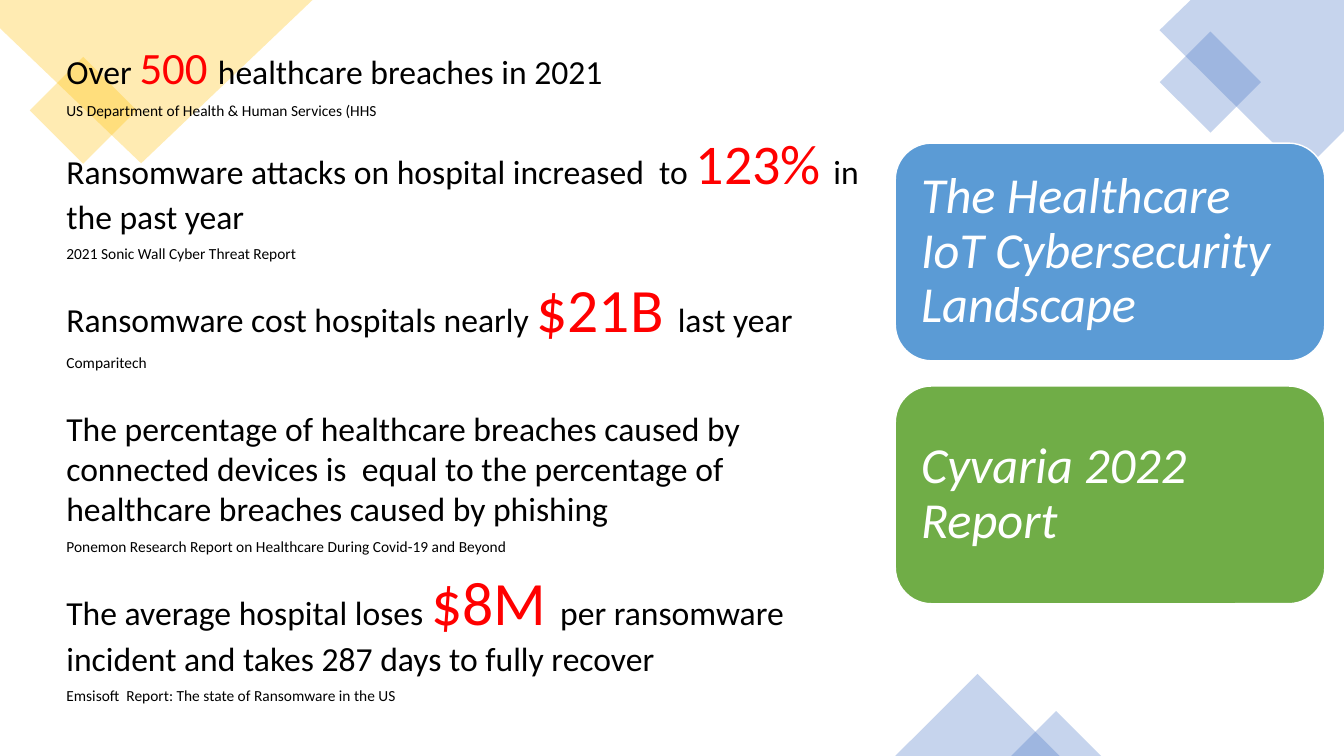
from lxml.etree import SubElement
from pptx import Presentation
from pptx.dml.color import RGBColor
from pptx.enum.shapes import MSO_SHAPE as Preset
from pptx.enum.text import MSO_ANCHOR as Anchor, MSO_AUTO_SIZE as AutoSize, PP_ALIGN as Align
from pptx.oxml.ns import qn
from pptx.util import Inches, Pt

FONT = "Calibri"
BLACK = RGBColor(0x00, 0x00, 0x00)
WHITE = RGBColor(0xFF, 0xFF, 0xFF)
RED = RGBColor(0xFF, 0x00, 0x00)
GOLD = RGBColor(0xFF, 0xC0, 0x00)
BLUE = RGBColor(0x44, 0x72, 0xC4)
SKY = RGBColor(0x5B, 0x9B, 0xD5)
GREEN = RGBColor(0x70, 0xAD, 0x47)

BODY, SOURCE = 24, 11
BLANK_LINE = 19.4

FACTS = [
    ([("Over ", BODY), ("500 ", 32), ("healthcare breaches in 2021", BODY)],
     "US Department of Health & Human Services (HHS", 0),
    ([("Ransomware attacks on hospital increased  to ", BODY), ("123% ", 40),
      ("in the past year", BODY)],
     "2021 Sonic Wall Cyber Threat Report", 0),
    ([("Ransomware cost hospitals nearly ", BODY), ("$21B ", 44), ("last year", BODY)],
     "Comparitech", 0),
    ([("The percentage of healthcare breaches caused by connected devices is  equal to "
       "the percentage of healthcare breaches caused by phishing", BODY)],
     "Ponemon Research Report on Healthcare During Covid-19 and Beyond", BLANK_LINE),
    ([("The average hospital loses ", BODY), ("$8M ", 44),
      ("per ransomware incident and takes 287 days to fully recover", BODY)],
     "Emsisoft  Report: The state of Ransomware in the US", 0),
]

CARDS = [("The Healthcare IoT Cybersecurity Landscape", SKY), ("Cyvaria 2022 Report", GREEN)]

SQUARES = [(0.45, 0.72, 0.75, GOLD), (11.65, 0.46, 0.71, BLUE)]
TRIANGLES = [(8.88, 1.63), (10.03, 0.89)]
CORNERS = [
    ([(0, 0), (3.1, 0), (1.4, 1.62), (0, 0.28)], GOLD),
    ([(11.81, 0), (13.33, 0), (13.33, 1.3), (12.92, 1.71), (11.5, 0.3)], BLUE),
]


def tint(shape, color):
    """Give a shape a 30 % opaque fill with no outline or shadow."""
    shape.shadow.inherit = False
    shape.fill.solid()
    shape.fill.fore_color.rgb = color
    shape.line.fill.background()
    color_element = shape.fill._xPr.find(qn("a:solidFill"))[0]
    SubElement(color_element, qn("a:alpha"), val="30000")


def add_decoration(slide, bottom):
    """Place the translucent squares, corner pieces and bottom triangles."""
    shapes = slide.shapes
    for left, top, side, color in SQUARES:
        square = shapes.add_shape(Preset.RECTANGLE, Inches(left), Inches(top),
                                  Inches(side), Inches(side))
        square.rotation = 45
        tint(square, color)
    for points, color in CORNERS:
        corner = [(Inches(x), Inches(y)) for x, y in points]
        builder = shapes.build_freeform(*corner[0])
        builder.add_line_segments(corner[1:], close=True)
        tint(builder.convert_to_shape(), color)
    for left, width in TRIANGLES:
        height = width / 2
        triangle = shapes.add_shape(Preset.ISOSCELES_TRIANGLE, Inches(left),
                                    Inches(bottom - height), Inches(width), Inches(height))
        tint(triangle, BLUE)


def add_facts(slide, left, top, width, height):
    """Fill a text box with facts, each followed by its source line."""
    box = slide.shapes.add_textbox(Inches(left), Inches(top), Inches(width), Inches(height))
    frame = box.text_frame
    frame.word_wrap = True
    frame.auto_size = AutoSize.SHAPE_TO_FIT_TEXT
    lines = [line for runs, source, before in FACTS
             for line in ((runs, before), ([(source, SOURCE)], 0))]
    for index, (runs, before) in enumerate(lines):
        paragraph = frame.add_paragraph() if index else frame.paragraphs[0]
        paragraph.space_after = Pt(6)
        if before:
            paragraph.space_before = Pt(before)
        for text, size in runs:
            run = paragraph.add_run()
            run.text = text
            run.font.name = FONT
            run.font.size = Pt(size)
            run.font.color.rgb = RED if size > BODY else BLACK


def add_cards(slide, left, top, width, height, gap):
    """Stack the rounded title cards downwards from the given corner."""
    for row, (text, color) in enumerate(CARDS):
        card = slide.shapes.add_shape(Preset.ROUNDED_RECTANGLE, Inches(left),
                                      Inches(top + row * (height + gap)),
                                      Inches(width), Inches(height))
        card.shadow.inherit = False
        card.fill.solid()
        card.fill.fore_color.rgb = color
        card.line.color.rgb = WHITE
        card.line.width = Pt(1)
        frame = card.text_frame
        frame.word_wrap = True
        frame.vertical_anchor = Anchor.MIDDLE
        frame.margin_left = frame.margin_right = Inches(0.15)
        frame.margin_top = frame.margin_bottom = Inches(0.15)
        frame.text = text
        paragraph = frame.paragraphs[0]
        paragraph.alignment = Align.LEFT
        paragraph.line_spacing = 0.9
        font = paragraph.runs[0].font
        font.name = FONT
        font.size = Pt(36)
        font.italic = True
        font.color.rgb = WHITE


def main():
    """Build and save the presentation."""
    presentation = Presentation()
    presentation.slide_width = Inches(13.33)
    presentation.slide_height = Inches(7.5)
    slide = presentation.slides.add_slide(presentation.slide_layouts[6])
    add_decoration(slide, 7.5)
    add_facts(slide, 0.56, 0.34, 8.11, 6.98)
    add_cards(slide, 8.88, 1.42, 4.26, 2.16, 0.25)
    presentation.save("out.pptx")


if __name__ == "__main__":
    main()
